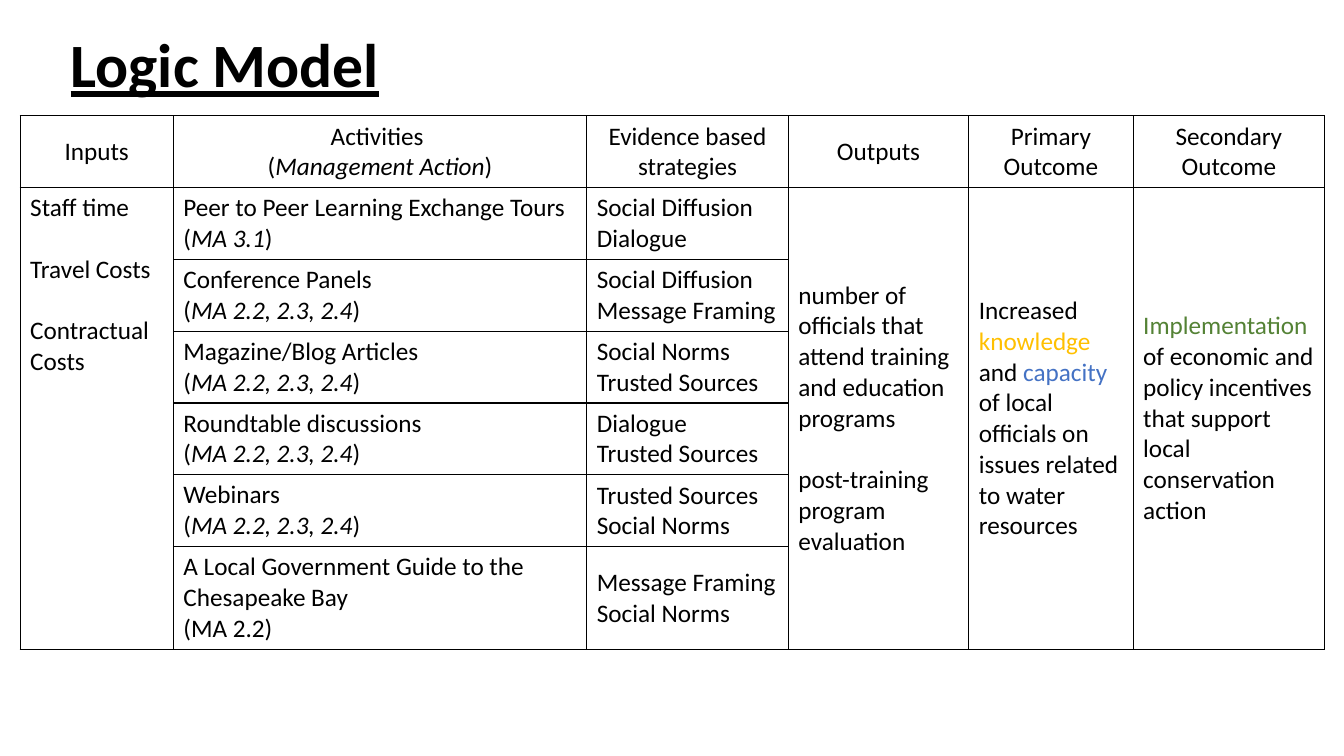
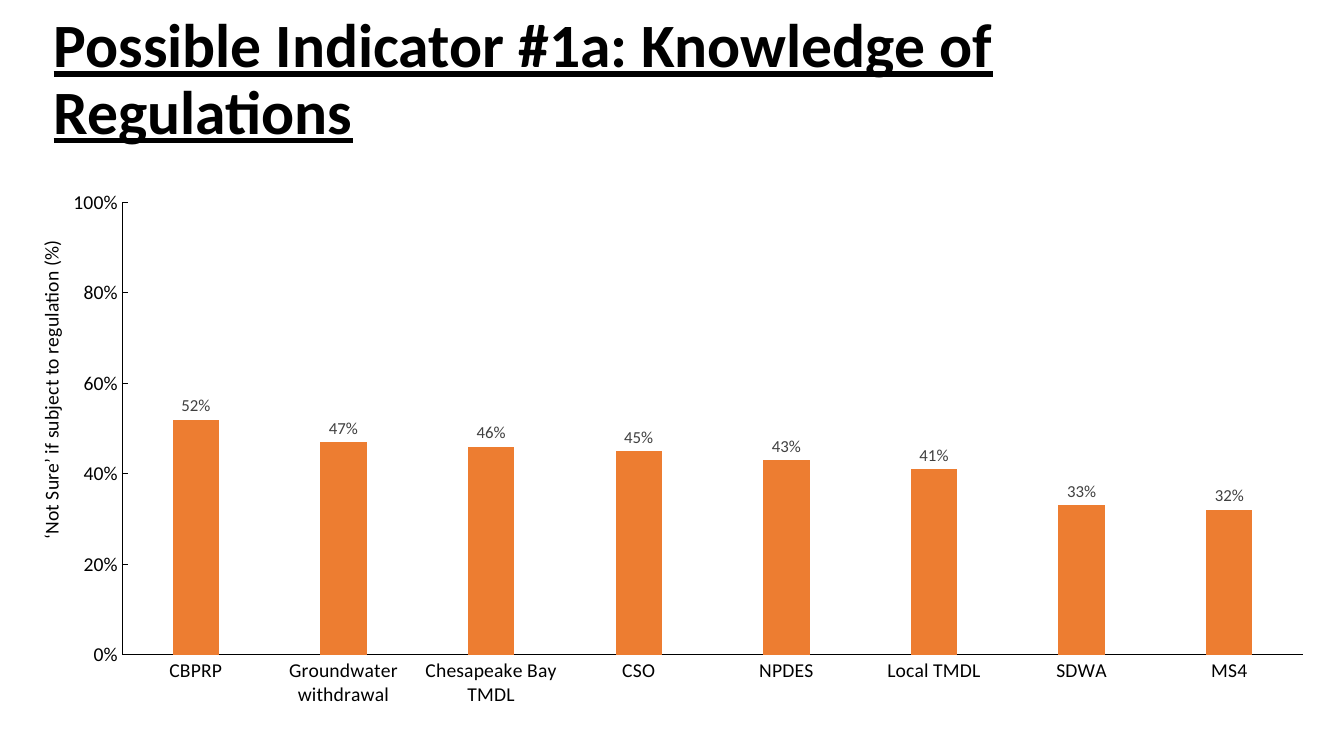
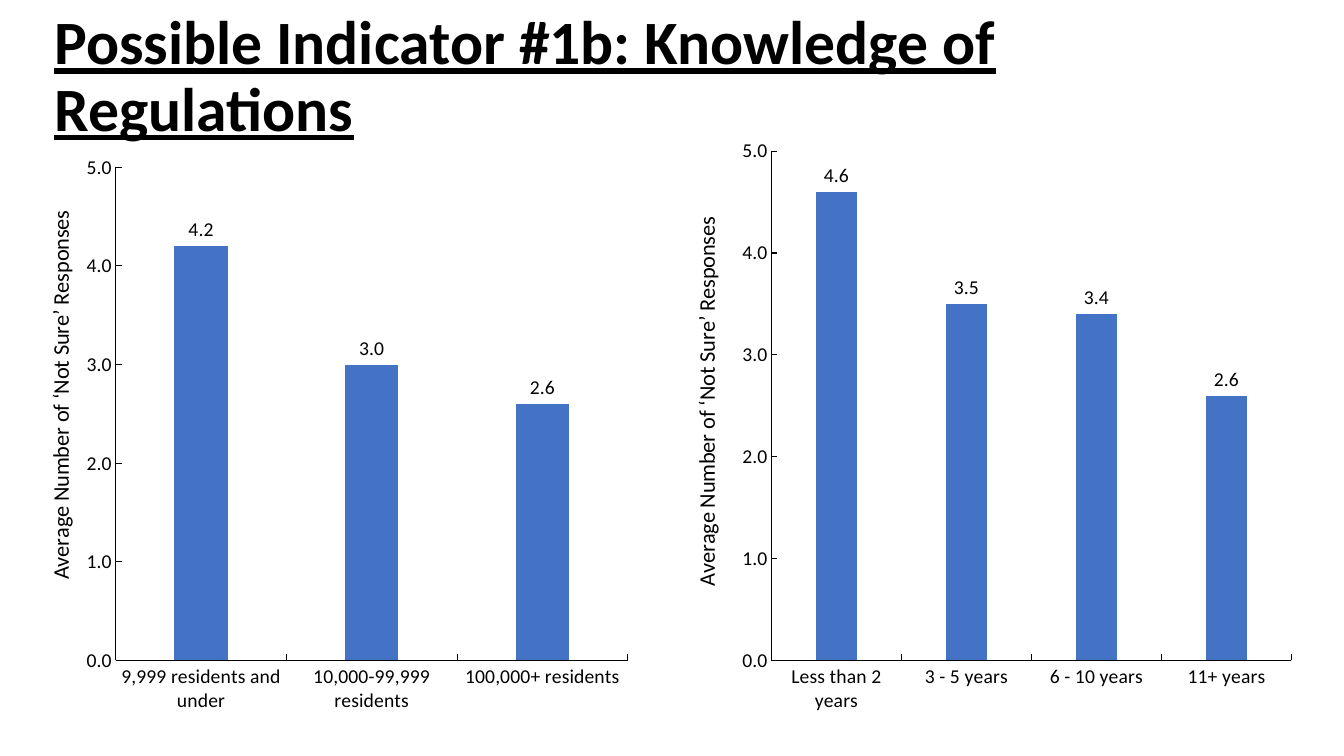
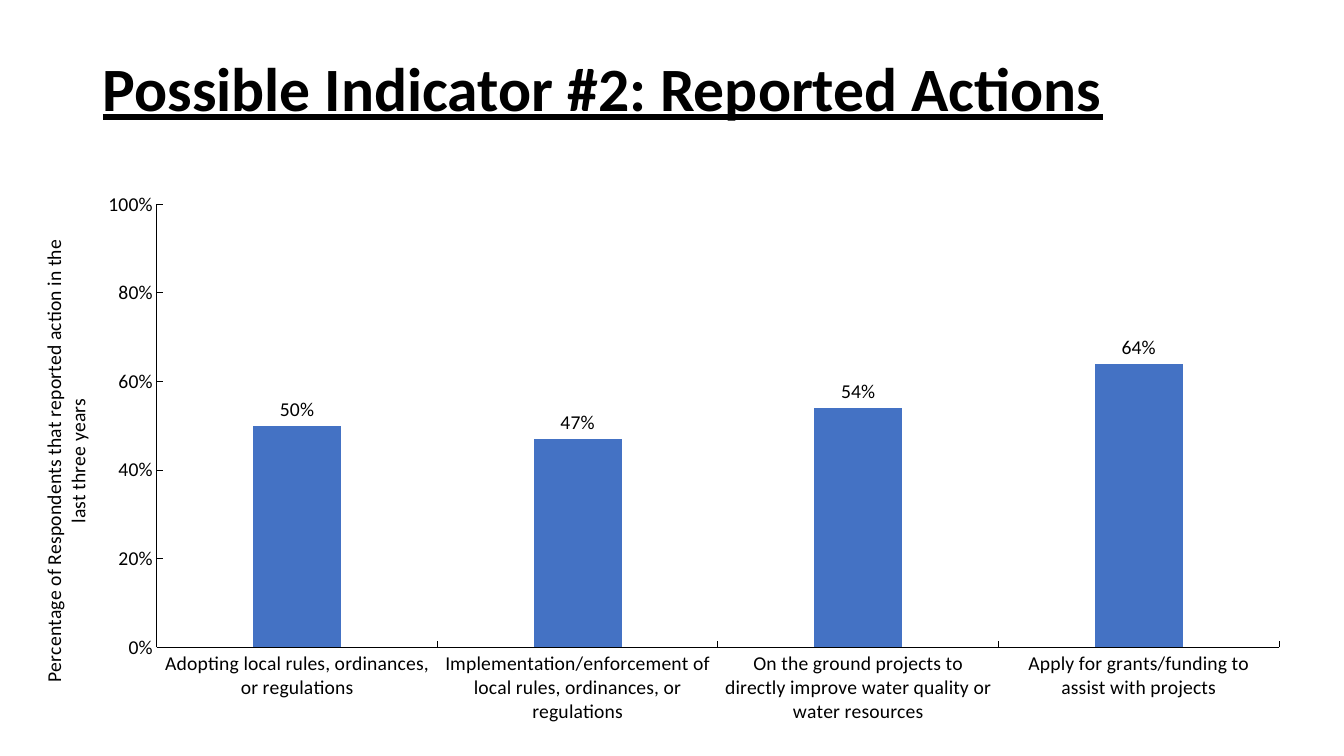
from itertools import product

from lxml import etree
from pptx import Presentation
from pptx import util as u
from pptx.chart import data
from pptx.dml import color
from pptx.enum import chart as charts
from pptx.enum import text
from pptx.oxml import ns

WIDTH, HEIGHT = u.Inches(13.33), u.Inches(7.5)
FONT = "Calibri"
COLORS = {
    "black": "000000",
    "gray": "404040",
    "blue": "4472C4",
    "orange": "ED7D31",
    "gold": "FFC000",
    "green": "548235",
}
TITLE_FONT = {"bold": True, "underline": True}
TITLE_FRAME = {
    "word_wrap": True,
    "auto_size": text.MSO_AUTO_SIZE.NONE,
    "vertical_anchor": text.MSO_ANCHOR.MIDDLE,
}
TITLE_PARA = {"alignment": text.PP_ALIGN.LEFT, "line_spacing": 0.9}
ITALIC = {"italic": True}
COLUMN_SHARES = [11.4, 30.76, 15, 13.43, 12.23, 14.25]
ROW_SHARES = [9.5] * 6 + [13.6]
PERCENT = {"number_format": "0%", "maximum": 1, "major": 0.2}
COUNT = {"number_format": "0.0", "maximum": 5, "major": 1}


def set_all(target, values):
    for name, value in values.items():
        setattr(target, name, value)


def rgb(name):
    return color.RGBColor.from_string(COLORS[name])


def across(share):
    return round(WIDTH * share / 100)


def down(share):
    return round(HEIGHT * share / 100)


def place(left, top, width, height):
    return across(left), down(top), across(width), down(height)


def set_font(font, size, tint="black", **values):
    set_all(font, {"name": FONT, "size": u.Pt(size), **values})
    font.color.rgb = rgb(tint)


def add_page(deck, title, area):
    page = deck.slides.add_slide(deck.slide_layouts[5])
    box = page.shapes.title
    set_all(box, dict(zip(("left", "top", "width", "height"), place(*area))))
    set_all(box.text_frame, TITLE_FRAME)
    box.text_frame.text = title
    para = box.text_frame.paragraphs[0]
    set_all(para, TITLE_PARA)
    set_font(para.runs[0].font, 44, **TITLE_FONT)
    return page


def add_borders(cell):
    properties = cell._tc.get_or_add_tcPr()
    for index, side in enumerate(("lnL", "lnR", "lnT", "lnB")):
        line = etree.Element(ns.qn(f"a:{side}"), w=str(u.Pt(1)))
        fill = etree.SubElement(line, ns.qn("a:solidFill"))
        etree.SubElement(fill, ns.qn("a:srgbClr"), val=COLORS["black"])
        properties.insert(index, line)


def fill_cell(cell, paras, centered=False, top=False, gap=0):
    cell.vertical_anchor = text.MSO_ANCHOR.TOP if top else text.MSO_ANCHOR.MIDDLE
    for index, spans in enumerate(paras):
        frame = cell.text_frame
        para = frame.add_paragraph() if index else frame.paragraphs[0]
        para.alignment = text.PP_ALIGN.CENTER if centered else text.PP_ALIGN.LEFT
        para.space_before = u.Pt(gap if index else 0)
        for words, style in spans:
            span = para.add_run()
            span.text = words
            set_font(span.font, 18, **style)


def plain(*lines):
    return [[(line, {})] for line in lines]


def bracketed(words):
    return [("(", {}), (words, ITALIC), (")", {})]


def add_logic_table(page):
    rows, columns = len(ROW_SHARES), len(COLUMN_SHARES)
    area = place(1.5, 15.33, sum(COLUMN_SHARES), sum(ROW_SHARES))
    table = page.shapes.add_table(rows, columns, *area).table
    set_all(table, {"first_row": False, "horz_banding": False})
    for column, share in zip(table.columns, COLUMN_SHARES):
        column.width = across(share)
    for row, share in zip(table.rows, ROW_SHARES):
        row.height = down(share)
    for row, column in product(range(rows), range(columns)):
        cell = table.cell(row, column)
        cell.fill.background()
        add_borders(cell)

    headings = [
        plain("Inputs"),
        plain("Activities ") + [bracketed("Management Action")],
        plain("Evidence based strategies"),
        plain("Outputs"),
        plain("Primary Outcome"),
        plain("Secondary Outcome"),
    ]
    for column, paras in enumerate(headings):
        fill_cell(table.cell(0, column), paras, centered=True)

    shared_actions = bracketed("MA 2.2, 2.3, 2.4")
    activities = [
        ("Peer to Peer Learning Exchange Tours", bracketed("MA 3.1"), "Social Diffusion", "Dialogue"),
        ("Conference Panels", shared_actions, "Social Diffusion", "Message Framing"),
        ("Magazine/Blog Articles", shared_actions, "Social Norms", "Trusted Sources"),
        ("Roundtable discussions", shared_actions, "Dialogue", "Trusted Sources"),
        ("Webinars", shared_actions, "Trusted Sources", "Social Norms"),
        ("A Local Government Guide to the Chesapeake Bay", [("(MA 2.2)", {})], "Message Framing", "Social Norms"),
    ]
    for row, (activity, action, *strategies) in enumerate(activities, 1):
        fill_cell(table.cell(row, 1), plain(activity) + [action], top=True)
        fill_cell(table.cell(row, 2), plain(*strategies))

    primary = [
        ("Increased", {}),
        (" knowledge ", {"tint": "gold"}),
        ("and ", {}),
        ("capacity", {"tint": "blue"}),
        (" of local officials on issues related to water resources", {}),
    ]
    secondary = [
        ("Implementation", {"tint": "green"}),
        (" of economic and policy incentives that support local conservation action", {}),
    ]
    outputs = plain(
        "number of officials that attend training and education programs",
        "post-training program evaluation",
    )
    tall_cells = {
        0: (plain("Staff time", "Travel Costs", "Contractual Costs"), {"top": True, "gap": 22}),
        3: (outputs, {"gap": 22}),
        4: ([primary], {}),
        5: ([secondary], {}),
    }
    for column, (paras, style) in tall_cells.items():
        cell = table.cell(1, column)
        cell.merge(table.cell(rows - 1, column))
        fill_cell(cell, paras, **style)


def set_layout(parent, index, shares, inner=False):
    for old in parent.findall(ns.qn("c:layout")):
        parent.remove(old)
    layout = etree.Element(ns.qn("c:layout"))
    manual = etree.SubElement(layout, ns.qn("c:manualLayout"))
    values = {"layoutTarget": "inner"} if inner else {}
    values |= {"xMode": "edge", "yMode": "edge"}
    values |= {key: str(round(share / 100, 4)) for key, share in zip("xywh", shares)}
    for key, value in values.items():
        etree.SubElement(manual, ns.qn(f"c:{key}"), val=value)
    parent.insert(index, layout)


def format_axis(axis, tick):
    set_all(axis, {
        "has_major_gridlines": False,
        "major_tick_mark": tick,
        "minor_tick_mark": charts.XL_TICK_MARK.NONE,
    })
    axis.format.line.width = u.Pt(0.75)
    axis.format.line.color.rgb = rgb("black")
    set_font(axis.tick_labels.font, 14)


def add_axis_title(axis, words, size, corner):
    title = axis.axis_title
    title.text_frame.text = words
    title.text_frame._txBody.bodyPr.set("rot", "-5400000")
    set_font(title.text_frame.paragraphs[0].runs[0].font, size, bold=False)
    set_layout(title._element, 1, corner)


def add_columns(page, area, points, scale, title, corner, plot_area,
                title_size=14, tint="blue", label_size=14, label_tint="black",
                tick=charts.XL_TICK_MARK.INSIDE):
    numbers = data.CategoryChartData(number_format=scale["number_format"])
    numbers.categories = list(points)
    numbers.add_series("Series 1", list(points.values()))
    kind = charts.XL_CHART_TYPE.COLUMN_CLUSTERED
    chart = page.shapes.add_chart(kind, *place(*area), numbers).chart
    set_all(chart, {"has_legend": False, "has_title": False})
    set_font(chart.font, 10)

    format_axis(chart.category_axis, tick)
    axis = chart.value_axis
    format_axis(axis, charts.XL_TICK_MARK.INSIDE)
    set_all(axis, {
        "minimum_scale": 0,
        "maximum_scale": scale["maximum"],
        "major_unit": scale["major"],
    })
    number_style = {"number_format": scale["number_format"], "number_format_is_linked": False}
    set_all(axis.tick_labels, number_style)
    add_axis_title(axis, title, title_size, corner)

    plot = chart.plots[0]
    set_all(plot, {"gap_width": 219, "overlap": -27, "vary_by_categories": False, "has_data_labels": True})
    set_all(plot.data_labels, {
        **number_style,
        "show_value": True,
        "position": charts.XL_LABEL_POSITION.OUTSIDE_END,
    })
    set_font(plot.data_labels.font, label_size, label_tint)
    fill = plot.series[0].format.fill
    fill.solid()
    fill.fore_color.rgb = rgb(tint)
    set_layout(chart._chartSpace.chart.plotArea, 0, plot_area, inner=True)


def main():
    deck = Presentation()
    set_all(deck, {"slide_width": WIDTH, "slide_height": HEIGHT})

    page = add_page(deck, "Logic Model", (4.5, 2, 86.25, 14))
    add_logic_table(page)

    page = add_page(deck, "Possible Indicator #1a: Knowledge of Regulations", (3.25, 3.6, 93.3, 14.27))
    regulations = {
        "CBPRP": 0.52,
        "Groundwater withdrawal": 0.47,
        "Chesapeake Bay TMDL": 0.46,
        "CSO": 0.45,
        "NPDES": 0.43,
        "Local TMDL": 0.41,
        "SDWA": 0.33,
        "MS4": 0.32,
    }
    add_columns(page, (1.65, 22.13, 96.47, 76.4), regulations, PERCENT,
                "‘Not Sure’ if subject to regulation (%)", (0.9, 12), (7.7, 6.1, 91.1, 78.3),
                tint="orange", label_size=12, label_tint="gray", tick=charts.XL_TICK_MARK.NONE)

    page = add_page(deck, "Possible Indicator #1b: Knowledge of Regulations", (3.3, 3.2, 93.3, 14.27))
    residents = {"9,999 residents and under": 4.2, "10,000-99,999 residents": 3, "100,000+ residents": 2.6}
    tenure = {"Less than 2 years": 4.6, "3 - 5 years": 3.5, "6 - 10 years": 3.4, "11+ years": 2.6}
    for area, points, corner, plot_area in (
        ((1.58, 19.6, 46.29, 76.93), residents, (3.2, 10), (15.2, 3.3, 82.3, 84.8)),
        ((50.04, 17.47, 47.19, 79.07), tenure, (2.3, 13.5), (15.6, 3.2, 82, 85.2)),
    ):
        add_columns(page, area, points, COUNT, "Average Number of ‘Not Sure’ Responses",
                    corner, plot_area, title_size=16)

    page = add_page(deck, "Possible Indicator #2: Reported Actions", (6.9, 5.33, 86.25, 13.47))
    actions = {
        "Adopting local rules, ordinances, or regulations": 0.5,
        "Implementation/enforcement of local rules, ordinances, or regulations": 0.47,
        "On the ground projects to directly improve water quality or water resources": 0.54,
        "Apply for grants/funding to assist with projects": 0.64,
    }
    add_columns(page, (1.95, 18.8, 94.45, 79.2), actions, PERCENT,
                "Percentage of Respondents that reported action in the last three years",
                (0.8, 15.7), (10.3, 10.4, 88.4, 74))

    deck.save("out.pptx")


if __name__ == "__main__":
    main()
